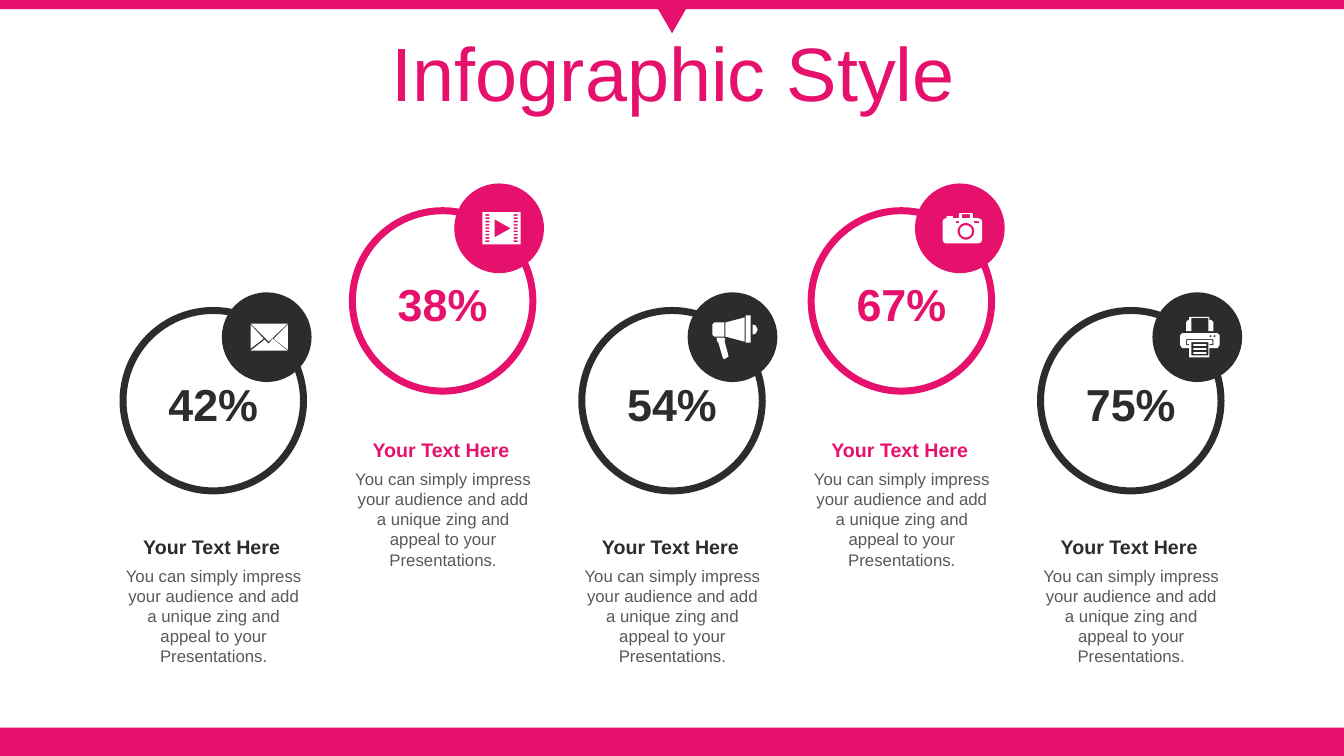
import math
from pptx import Presentation, util as u
from pptx.dml.color import RGBColor
from pptx.enum import shapes as es, text as et

PINK = RGBColor(0xE6, 0x10, 0x6D)
DARK = RGBColor(0x2C, 0x2C, 0x2C)
GREY = RGBColor(0x59, 0x59, 0x59)
WHITE = RGBColor(0xFF, 0xFF, 0xFF)
KIND = es.MSO_SHAPE

W, H = 13.33, 7.5
FIRST_COL, COL_STEP = 1.22, 2.275
ROWS = {"high": 2.09, "low": 3.08}
RING, BADGE = 1.79, 0.89
ICON_CENTRE = (0.47, 0.445)
ICON_UNIT = 914.4
HEADING = "Your Text Here"
BODY = "You can simply impress your audience and add a unique zing and appeal to your Presentations."


def rect(l, t, r, b):
    return [(l, t), (r, t), (r, b), (l, b)]


def circle(cx, cy, r, n=36):
    turns = [2 * math.pi * i / n for i in range(n)]
    return [(cx + r * math.cos(a), cy + r * math.sin(a)) for a in turns]


def envelope():
    return [[(22, 15), (37, 27), (0, 27), (14, 16), (18, 20)],
            [(37, 1), (37, 26), (23, 15)],
            [(0, 1), (13, 15), (0, 25)],
            [(0, 0), (37, 0), (18, 18)]]


def film():
    holes = [rect(x, 2 + 3.25 * i, x + 4, 3.6 + 3.25 * i) for x in (3, 31) for i in range(9)]
    return holes + [[(12, 7), (12, 25), (28, 16)], rect(0, 0, 38, 32)]


def megaphone():
    return [[(12, 22), (13, 24), (12, 25), (16, 40), (16, 41), (14, 42), (13, 43), (11, 43),
             (10, 41), (6, 27), (5, 26), (4, 22)],
            [(40, 9), (43, 10), (45, 14), (43, 18), (40, 19)],
            [(2, 7), (12, 7), (12, 21), (2, 21), (0, 19), (0, 9)],
            [(32, 2), (32, 26), (13, 21), (13, 7)],
            rect(33, 0, 38, 27)]


def camera():
    return [circle(23, 18, 6), circle(23, 18, 8.3),
            rect(13, 8, 16, 10), rect(31, 8, 36, 10), rect(19, 1, 27, 5),
            [(17, 0), (29, 0), (30, 1), (30, 5), (35, 5), (38, 6), (39, 8), (39, 27),
             (38, 29), (35, 30), (3, 30), (1, 29), (0, 27), (0, 8), (1, 6), (3, 5),
             (4, 5), (4, 3), (10, 3), (10, 5), (16, 5), (16, 1)]]


def printer():
    lines = [rect(13, y, 26, y + 1.7) for y in (27, 31, 35)]
    return lines + [
        rect(11, 25, 28, 38), circle(34, 19, 1), circle(30, 19, 1),
        [(6, 22), (6, 28), (9, 28), (9, 27), (7, 27), (7, 23), (32, 23), (32, 27),
         (29, 27), (29, 28), (33, 28), (33, 22)],
        [(2, 16), (37, 16), (39, 18), (39, 28), (37, 31), (29, 31), (29, 40), (9, 40),
         (9, 31), (2, 31), (0, 28), (0, 18)],
        [(9, 0), (29, 0), (29, 3), (31, 3), (33, 5), (33, 14), (28, 14), (28, 1),
         (11, 1), (11, 14), (6, 14), (6, 5), (8, 3), (9, 3)]]


STATS = [("42%", "low", DARK, 0.98, envelope),
         ("38%", "high", PINK, 1.01, film),
         ("54%", "low", DARK, 1.05, megaphone),
         ("67%", "high", PINK, 1.03, camera),
         ("75%", "low", DARK, 1.11, printer)]


def apply(obj, values):
    for name, value in values.items():
        setattr(obj, name, value)


def inches(*lengths):
    return [u.Inches(v) for v in lengths]


def paint(sp, fill, line=None):
    sp.shadow.inherit = False
    sp.fill.solid()
    sp.fill.fore_color.rgb = fill
    if line is None:
        sp.line.fill.background()
    else:
        sp.line.color.rgb = line
        sp.line.width = u.Pt(5)
    return sp


def add_shape(s, kind, box, fill, line=None):
    return paint(s.shapes.add_shape(kind, *inches(*box)), fill, line)


def write(tf, words, size, color, bold=False):
    apply(tf, {"word_wrap": True, "auto_size": et.MSO_AUTO_SIZE.NONE})
    p = tf.paragraphs[0]
    p.alignment = et.PP_ALIGN.CENTER
    r = p.add_run()
    r.text = words
    apply(r.font, {"name": "Arial", "size": u.Pt(size), "bold": bold})
    r.font.color.rgb = color
    return p


def add_text(s, box, *style):
    write(s.shapes.add_textbox(*inches(*box)).text_frame, *style)


def add_icon(s, centre, contours):
    width, height = (max(pt[k] for c in contours for pt in c) / 100 for k in (0, 1))
    scaled = [[(x * 10, y * 10) for x, y in c] for c in contours]
    fb = s.shapes.build_freeform(*scaled[0][0], scale=ICON_UNIT)
    for i, points in enumerate(scaled):
        if i:
            fb.move_to(*points[0])
        fb.add_line_segments(points[1:], close=True)
    origin = inches(centre[0] - width / 2, centre[1] - height / 2)
    paint(fb.convert_to_shape(*origin), WHITE)


def add_frame(s):
    add_shape(s, KIND.RECTANGLE, (0, 7.22, W, 0.3), PINK)
    add_shape(s, KIND.RECTANGLE, (0, 0, W, 0.09), PINK)
    pointer = add_shape(s, KIND.ISOSCELES_TRIANGLE, (W / 2 - 0.19, 0, 0.38, 0.33), PINK)
    pointer.rotation = 180


def add_title(s, box):
    sp = s.shapes.title
    apply(sp, dict(zip(("left", "top", "width", "height"), inches(*box))))
    p = write(sp.text_frame, "Infographic Style", 54, PINK)
    sp.text_frame.vertical_anchor = et.MSO_ANCHOR.MIDDLE
    apply(p, {"line_spacing": 0.9, "space_before": u.Pt(10)})


def add_stat(s, left, row, percent, color, badge_dx, icon):
    top = ROWS[row]
    badge_x = left + badge_dx
    badge_y = top - (0.27 if row == "high" else 0.18)
    add_shape(s, KIND.OVAL, (left, top, RING, RING), WHITE, color)
    add_shape(s, KIND.OVAL, (badge_x, badge_y, BADGE, BADGE), color)
    add_icon(s, (badge_x + ICON_CENTRE[0], badge_y + ICON_CENTRE[1]), icon())
    add_text(s, (left + 0.34, top + 0.61, 1.11, 0.64), percent, 32, color, True)
    heading_y = top + (2.21 if row == "high" else 2.18)
    add_text(s, (left - 0.1, heading_y, 1.96, 0.34), HEADING, 14, color, True)
    add_text(s, (left - 0.09, heading_y + 0.3, 1.98, 1.11), BODY, 12, GREY)


def main():
    prs = Presentation()
    apply(prs, {"slide_width": u.Inches(W), "slide_height": u.Inches(H)})
    s = prs.slides.add_slide(prs.slide_layouts[5])
    add_frame(s)
    add_title(s, (0.35, 0.37, 12.66, 0.79))
    for i, (percent, row, color, badge_dx, icon) in enumerate(STATS):
        add_stat(s, FIRST_COL + i * COL_STEP, row, percent, color, badge_dx, icon)
    prs.save("out.pptx")


if __name__ == "__main__":
    main()
